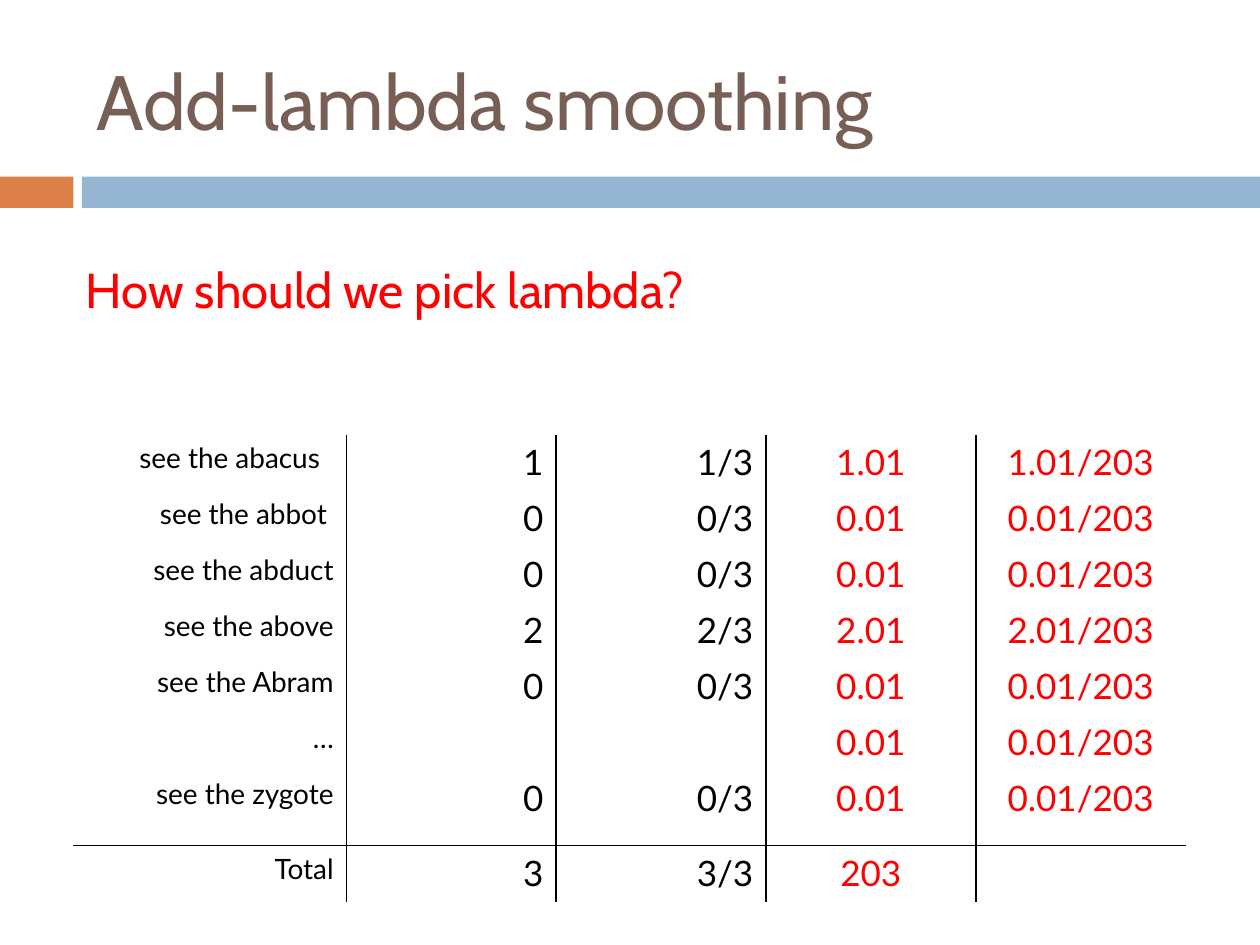
import pptx
import pptx.util
import pptx.dml.color
import pptx.enum.shapes
import pptx.enum.text
import lxml.etree
import pptx.oxml.ns

Cm = pptx.util.Cm
Pt = pptx.util.Pt
RGBColor = pptx.dml.color.RGBColor
Align = pptx.enum.text.PP_ALIGN

ORANGE = RGBColor(0xDD, 0x80, 0x47)
BLUE = RGBColor(0x94, 0xB6, 0xD2)
BROWN = RGBColor(0x77, 0x5F, 0x55)
RED = RGBColor(0xFF, 0, 0)
BLACK = RGBColor(0, 0, 0)


def style(para, font, size, color):
    para.font.name = font
    para.font.size = Pt(size)
    para.font.color.rgb = color


def border(cell, sides):
    """Draw black lines on the named sides and clear the others."""
    props = cell._tc.get_or_add_tcPr()
    for i, side in enumerate("LRTB"):
        line = lxml.etree.Element(pptx.oxml.ns.qn("a:ln" + side), w=str(Pt(1)))
        if side in sides:
            fill = lxml.etree.SubElement(line, pptx.oxml.ns.qn("a:solidFill"))
            lxml.etree.SubElement(fill, pptx.oxml.ns.qn("a:srgbClr"), val=str(BLACK))
        else:
            lxml.etree.SubElement(line, pptx.oxml.ns.qn("a:noFill"))
        props.insert(i, line)


deck = pptx.Presentation()
deck.slide_width = Cm(25.4)
deck.slide_height = Cm(19.05)
slide = deck.slides.add_slide(deck.slide_layouts[6])

# Band under the title
for left, width, color in [(0, 1.48, ORANGE), (1.65, 23.75, BLUE)]:
    bar = slide.shapes.add_shape(
        pptx.enum.shapes.MSO_SHAPE.RECTANGLE, Cm(left), Cm(3.56), Cm(width), Cm(0.63))
    bar.shadow.inherit = False
    bar.fill.solid()
    bar.fill.fore_color.rgb = color
    bar.line.fill.background()

# Title and question
for text, box, size, color, anchor in [
    ("Add-lambda smoothing", (1.7, 0.64, 22.65, 2.74), 44, BROWN, "MIDDLE"),
    ("How should we pick lambda?", (1.48, 5.11, 17.78, 1.45), 28, RED, "TOP"),
]:
    frame = slide.shapes.add_textbox(*map(Cm, box)).text_frame
    frame.word_wrap = True
    frame.vertical_anchor = pptx.enum.text.MSO_ANCHOR[anchor]
    frame.text = text
    style(frame.paragraphs[0], "Cabin", size, color)

# Table of counts: phrase, count, share, smoothed count, smoothed share
rows = [
    ("see the abacus", "1", "1/3", "1.01", "1.01/203"),
    ("see the abbot", "0", "0/3", "0.01", "0.01/203"),
    ("see the abduct", "0", "0/3", "0.01", "0.01/203"),
    ("see the above", "2", "2/3", "2.01", "2.01/203"),
    ("see the Abram", "0", "0/3", "0.01", "0.01/203"),
    ("…", "", "", "0.01", "0.01/203"),
    ("see the zygote", "0", "0/3", "0.01", "0.01/203"),
    ("Total", "3", "3/3", "203", ""),
]
widths = [5.5] + [4.23] * 4
heights = [1.13] * 6 + [1.51, 1.14]
last = len(rows) - 1
table = slide.shapes.add_table(
    len(rows), len(widths), Cm(1.48), Cm(8.76), Cm(sum(widths)), Cm(sum(heights))).table
table.first_row = False
table.horz_banding = False
for col, width in zip(table.columns, widths):
    col.width = Cm(width)
for row, height in zip(table.rows, heights):
    row.height = Cm(height)

for r, row in enumerate(rows):
    for c, text in enumerate(row):
        cell = table.cell(r, c)
        cell.text = text
        para = cell.text_frame.paragraphs[0]
        para.alignment = Align.RIGHT if c < 3 else Align.CENTER
        style(para, "Lato", 16 if c == 0 else 20, BLACK if c < 3 else RED)
        cell.fill.background()
        sides = "L" * (c > 0) + "R" * (c < 4)
        sides += "T" * (r == last) + "B" * (r == last - 1)
        border(cell, sides)

# The first two phrases sit a little in from the right
for r, inset in enumerate([0.53, 0.39]):
    table.cell(r, 0).margin_right = Cm(inset)

deck.save("out.pptx")
